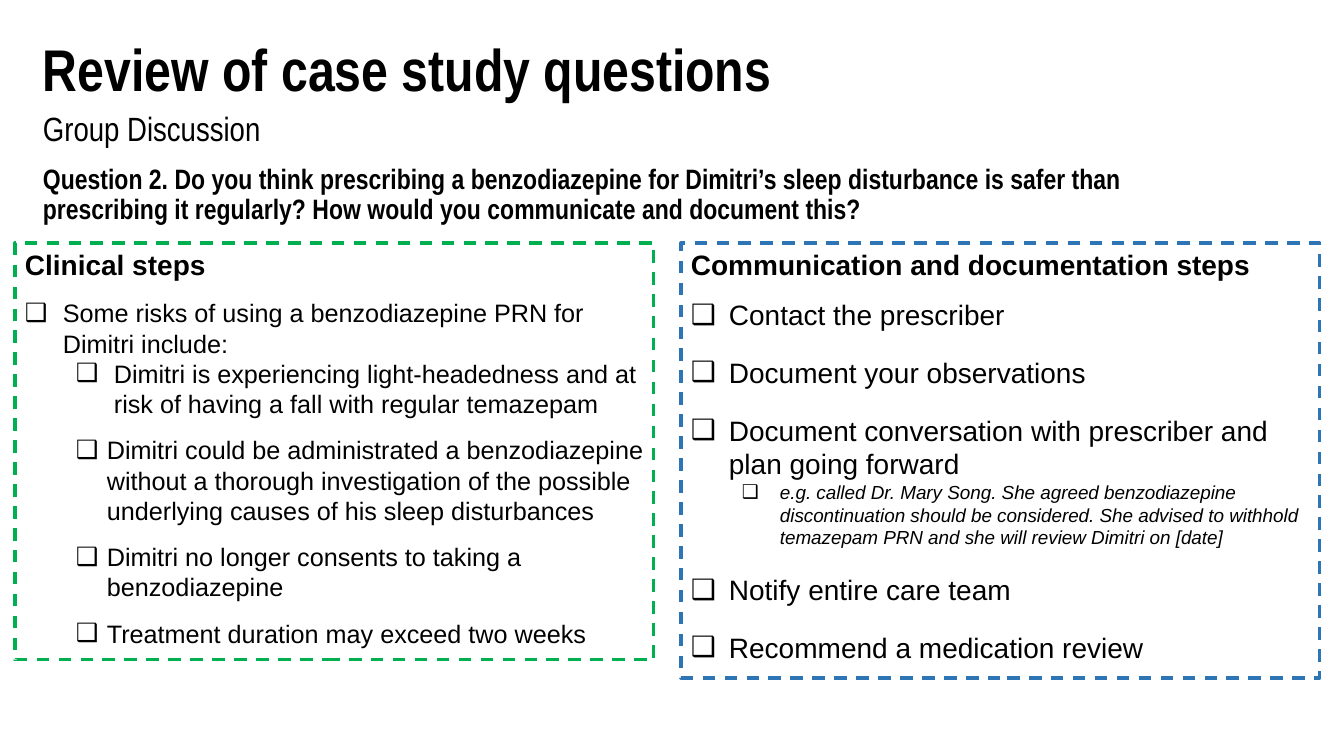
import pptx
import pptx.util
import pptx.dml.color
import pptx.enum.dml
import pptx.enum.shapes
import pptx.enum.text
import pptx.oxml
import pptx.oxml.ns

INK = "000000"
HEAD = dict(size=20, bold=True)
BODY = dict(size=18)
STEP = dict(size=20)
NOTE = dict(size=13.5, italic=True)
FLAT, MAIN, DEEP, SUB = (0, 0), (38, 38), (89, 38), (82, 31)

CLINIC = [
    ("Clinical steps", HEAD, FLAT, 0),
    ("Some risks of using a benzodiazepine PRN for Dimitri include:", BODY, MAIN, 11.5),
    ("Dimitri is experiencing light-headedness and at risk of having a fall with regular temazepam", BODY, DEEP, 0),
    ("Dimitri could be administrated a benzodiazepine without a thorough investigation of the possible underlying causes of his sleep disturbances", BODY, SUB, 11.5),
    ("Dimitri no longer consents to taking a benzodiazepine", BODY, SUB, 11.5),
    ("Treatment duration may exceed two weeks", BODY, SUB, 11.5),
]
RECORD = [
    ("Communication and documentation steps", HEAD, FLAT, 0),
    ("Contact the prescriber", STEP, MAIN, 11.5),
    ("Document your observations", STEP, MAIN, 17.25),
    ("Document conversation with prescriber and plan going forward", STEP, MAIN, 17.25),
    ("e.g. called Dr. Mary Song. She agreed benzodiazepine discontinuation should be considered. She advised to withhold temazepam PRN and she will review Dimitri on [date]", NOTE, DEEP, 0),
    ("Notify entire care team", STEP, MAIN, 17.25),
    ("Recommend a medication review", STEP, MAIN, 17.25),
]


def px(n):
    return pptx.util.Emu(round(n * 914400 / 100.8))


def tint(code):
    return pptx.dml.color.RGBColor.from_string(code)


def style(item, form):
    for key, value in form.items():
        setattr(item, key, value)


def set_font(para, face, form):
    style(para.font, dict(form, name=face, size=pptx.util.Pt(form["size"])))
    para.font.color.rgb = tint(INK)


def set_frame(frame):
    style(frame, dict(word_wrap=True,
                      auto_size=pptx.enum.text.MSO_AUTO_SIZE.NONE,
                      vertical_anchor=pptx.enum.text.MSO_ANCHOR.TOP))
    return frame


def add_mark(para, left, hang):
    props = para._p.get_or_add_pPr()
    props.set("marL", str(px(left)))
    props.set("indent", str(px(-hang)))
    space = pptx.oxml.ns.nsdecls("a")
    for xml in (f'<a:buClr {space}><a:srgbClr val="{INK}"/></a:buClr>',
                f'<a:buFont {space} typeface="Arial"/>',
                f'<a:buChar {space} char="❑"/>'):
        props.append(pptx.oxml.parse_xml(xml))


def add_line(slide, box, text, form):
    shape = slide.shapes.add_textbox(*map(px, box))
    para = set_frame(shape.text_frame).paragraphs[0]
    style(para, dict(text=text, line_spacing=0.9))
    set_font(para, "Arial Narrow", form)


def add_header(slide, box):
    left, top, width, height = box
    add_line(slide, (left, top, 822, 82), "Review of case study questions", dict(size=42, bold=True))
    add_line(slide, (left, top + 72, 822, 51), "Group Discussion", dict(size=24))
    add_line(slide, (left, top + 124, width, height - 124),
             "Question 2. Do you think prescribing a benzodiazepine for Dimitri’s sleep disturbance is safer than prescribing it regularly? How would you communicate and document this?", HEAD)


def add_panel(slide, box, edge, items):
    kind = pptx.enum.shapes.MSO_SHAPE.RECTANGLE
    shape = slide.shapes.add_shape(kind, *map(px, box))
    shape.shadow.inherit = False
    shape.fill.background()
    shape.line.color.rgb = tint(edge)
    style(shape.line, dict(width=pptx.util.Pt(2.25),
                           dash_style=pptx.enum.dml.MSO_LINE.DASH))
    frame = set_frame(shape.text_frame)
    for spot, (text, form, (left, hang), gap) in enumerate(items):
        para = frame.add_paragraph() if spot else frame.paragraphs[0]
        style(para, dict(text=text, alignment=pptx.enum.text.PP_ALIGN.LEFT,
                         level=int(left > MAIN[0])))
        if gap:
            para.space_before = pptx.util.Pt(gap)
        if hang:
            add_mark(para, left, hang)
        set_font(para, "Arial", form)


def main():
    deck = pptx.Presentation()
    style(deck, dict(slide_width=px(1344), slide_height=px(756)))
    slide = deck.slides.add_slide(deck.slide_layouts[6])
    add_header(slide, (33, 36, 1191, 195))
    add_panel(slide, (15, 243, 639, 417), "00B050", CLINIC)
    add_panel(slide, (681, 243, 639, 435), "2E75B5", RECORD)
    deck.save("out.pptx")


if __name__ == "__main__":
    main()
